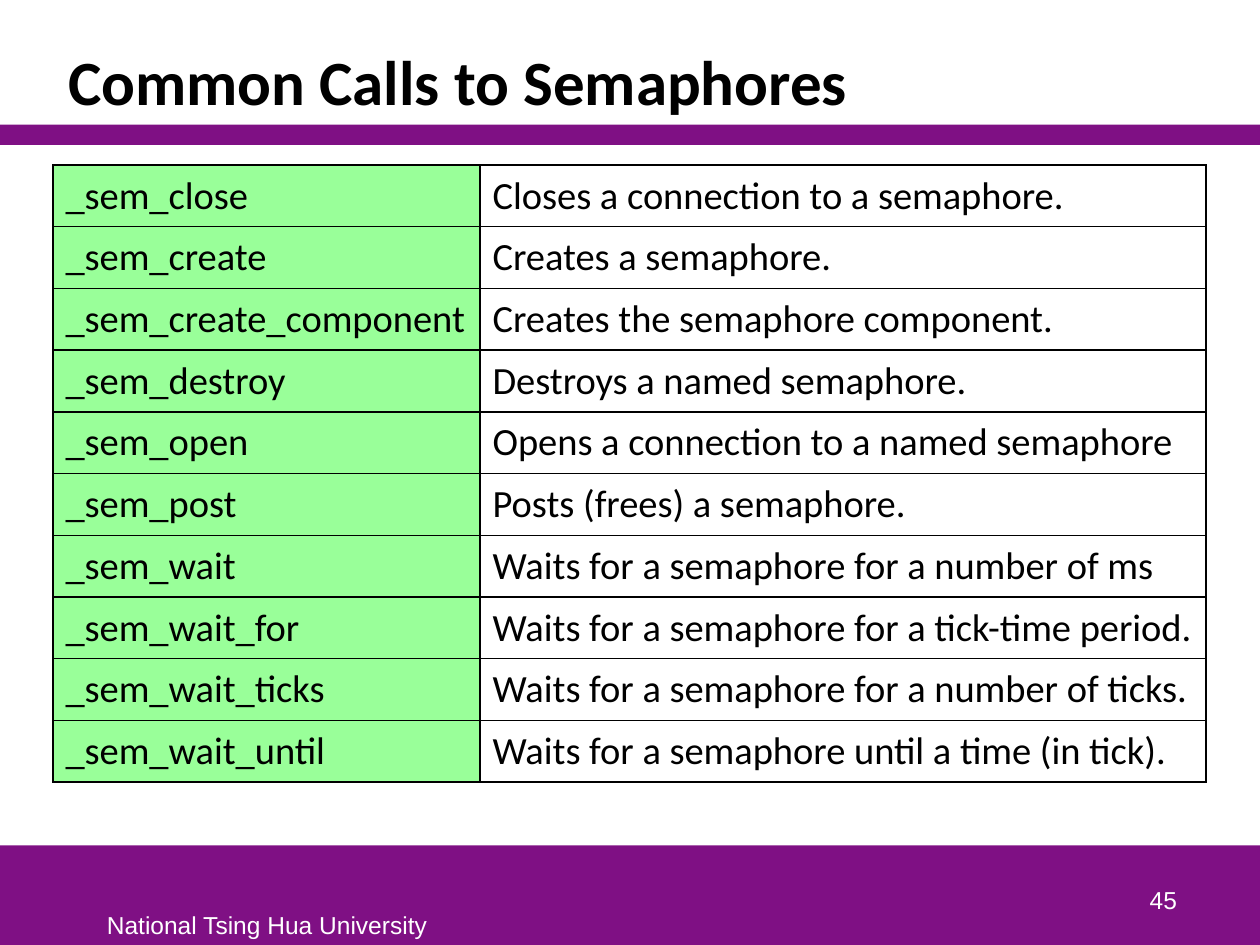
"""Build the slide that lists the common semaphore calls."""
import lxml.etree
import pptx
import pptx.dml.color
import pptx.enum.shapes
import pptx.enum.text
import pptx.oxml.ns
import pptx.util

Inches = pptx.util.Inches
Align = pptx.enum.text.PP_ALIGN
Anchor = pptx.enum.text.MSO_ANCHOR
qn = pptx.oxml.ns.qn

CALLS = [
    ("_sem_close", "Closes a connection to a semaphore."),
    ("_sem_create", "Creates a semaphore."),
    ("_sem_create_component", "Creates the semaphore component."),
    ("_sem_destroy", "Destroys a named semaphore."),
    ("_sem_open", "Opens a connection to a named semaphore"),
    ("_sem_post", "Posts (frees) a semaphore."),
    ("_sem_wait", "Waits for a semaphore for a number of ms"),
    ("_sem_wait_for", "Waits for a semaphore for a tick-time period."),
    ("_sem_wait_ticks", "Waits for a semaphore for a number of ticks."),
    ("_sem_wait_until", "Waits for a semaphore until a time (in tick)."),
]


def color(code):
    return pptx.dml.color.RGBColor.from_string(code)


class Deck:
    purple, green, black, white = "7F1084", "99FF99", "000000", "FFFFFF"
    body, small = "Calibri", "Arial"

    def __init__(self):
        self.file = pptx.Presentation()
        self.file.slide_width = Inches(10)
        self.file.slide_height = Inches(7.5)
        self.slide = self.file.slides.add_slide(self.file.slide_layouts[5])

    def place(self, shape, left, top, width, height):
        shape.left, shape.top = Inches(left), Inches(top)
        shape.width, shape.height = Inches(width), Inches(height)

    def style(self, frame, text, size, face, ink, bold=False):
        frame.text = text
        para = frame.paragraphs[0]
        font = para.runs[0].font
        font.size, font.name, font.bold = pptx.util.Pt(size), face, bold
        font.color.rgb = color(ink)
        return para

    def band(self, top, height):
        shape = self.slide.shapes.add_shape(
            pptx.enum.shapes.MSO_SHAPE.RECTANGLE,
            0, Inches(top), Inches(10), Inches(height))
        shape.shadow.inherit = False
        shape.fill.solid()
        shape.fill.fore_color.rgb = color(self.purple)
        shape.line.fill.background()

    def title(self, text, *area):
        shape = self.slide.shapes.title
        self.place(shape, *area)
        frame = shape.text_frame
        frame.vertical_anchor = Anchor.BOTTOM
        para = self.style(frame, text, 36, self.body, self.black, True)
        para.alignment, para.line_spacing = Align.LEFT, 0.85

    def label(self, text, area, anchor=Anchor.TOP, align=Align.LEFT, wrap=True):
        box = self.slide.shapes.add_textbox(*map(Inches, area))
        frame = box.text_frame
        frame.word_wrap, frame.vertical_anchor = wrap, anchor
        para = self.style(frame, text, 14, self.small, self.white)
        para.alignment = align

    def border(self, cell):
        props = cell._tc.get_or_add_tcPr()
        for side in ("a:lnL", "a:lnR", "a:lnT", "a:lnB"):
            line = lxml.etree.SubElement(props, qn(side), w="12700")
            fill = lxml.etree.SubElement(line, qn("a:solidFill"))
            lxml.etree.SubElement(fill, qn("a:srgbClr"), val=self.black)

    def cell(self, cell, text, fill):
        self.border(cell)
        if fill:
            cell.fill.solid()
            cell.fill.fore_color.rgb = color(fill)
        else:
            cell.fill.background()
        cell.vertical_anchor = Anchor.MIDDLE
        para = self.style(cell.text_frame, text, 22, self.body, self.black)
        props = para._p.get_or_add_pPr()
        props.set("marL", str(Inches(0.38)))
        props.set("indent", str(Inches(-0.38)))

    def table(self, rows, left, top, widths, height):
        table = self.slide.shapes.add_table(
            len(rows), len(widths), Inches(left), Inches(top),
            Inches(sum(widths)), Inches(height * len(rows))).table
        table.first_row = table.horz_banding = False
        for col, width in zip(table.columns, widths):
            col.width = Inches(width)
        for row, texts in zip(table.rows, rows):
            row.height = Inches(height)
            for cell, text, fill in zip(row.cells, texts, (self.green, None)):
                self.cell(cell, text, fill)


def main():
    deck = Deck()
    deck.band(6.71, 0.79)
    deck.band(0.99, 0.16)
    deck.label("National Tsing Hua University", (0.75, 7.17, 2.76, 0.33), wrap=False)
    deck.title("Common Calls to Semaphores", 0.44, 0.25, 8.97, 0.74)
    deck.label("45", (7.36, 6.81, 2.08, 0.5), Anchor.BOTTOM, Align.RIGHT)
    deck.table(CALLS, 0.42, 1.31, (3.39, 5.76), 0.49)
    deck.file.save("out.pptx")


if __name__ == "__main__":
    main()
